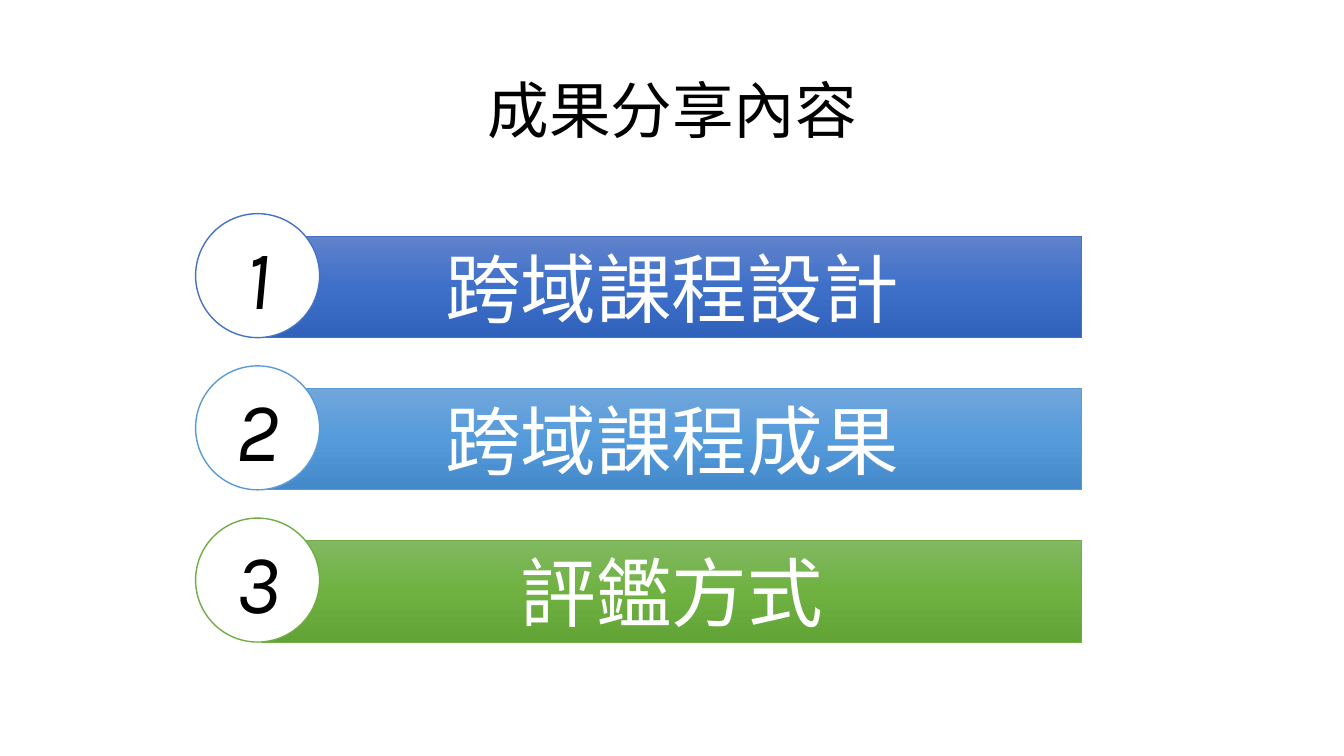
from copy import deepcopy

from lxml import etree
from pptx import Presentation
from pptx import util as u
from pptx.dml.color import RGBColor
from pptx.enum import shapes, text
from pptx.oxml.ns import qn

BLACK = RGBColor(0x00, 0x00, 0x00)
WHITE = RGBColor(0xFF, 0xFF, 0xFF)
BLUE = RGBColor(0x44, 0x72, 0xC4)
SKY = RGBColor(0x5B, 0x9B, 0xD5)
GREEN = RGBColor(0x70, 0xAD, 0x47)
BLUE_SHADES = [RGBColor(0x61, 0x83, 0xCB), RGBColor(0x3E, 0x70, 0xCA), RGBColor(0x30, 0x62, 0xBB)]
SKY_SHADES = [RGBColor(0x71, 0xA6, 0xDB), RGBColor(0x55, 0x9B, 0xDB), RGBColor(0x44, 0x8A, 0xCA)]
GREEN_SHADES = [RGBColor(0x81, 0xB8, 0x61), RGBColor(0x6F, 0xB2, 0x42), RGBColor(0x62, 0xA3, 0x36)]

CJK = "Noto Sans CJK SC"
TITLE_FORMAT = {"size": u.Pt(44), "name": CJK}
BAR_FORMAT = {"size": u.Pt(54), "name": CJK}
NUMBER_FORMAT = {"size": u.Pt(60), "name": "Karla", "italic": True}

# Row grid, in inches
BAR_LEFT, BAR_WIDTH, BAR_HEIGHT = 2.6, 8.13, 1.01
FIRST_TOP, ROW_PITCH = 2.34, 1.51
CIRCLE_LEFT, CIRCLE_SIZE = 1.94, 1.23


def write(shape, words, color, formats):
    frame = shape.text_frame
    frame.word_wrap = True
    frame.vertical_anchor = text.MSO_ANCHOR.MIDDLE
    paragraph = frame.paragraphs[0]
    paragraph.alignment = text.PP_ALIGN.CENTER
    run = paragraph.add_run()
    run.text = words
    run.font.color.rgb = color
    for key, value in formats.items():
        setattr(run.font, key, value)
    # East Asian characters take their own typeface entry
    etree.SubElement(run.font._element, qn("a:ea"), typeface=formats["name"])
    return paragraph


def add_outlined(kind, left, top, width, height, line_color, line_width):
    shape = slide.shapes.add_shape(kind, *(u.Inches(n) for n in (left, top, width, height)))
    shape.shadow.inherit = False
    shape.line.color.rgb = line_color
    shape.line.width = u.Pt(line_width)
    return shape


presentation = Presentation()
presentation.slide_width, presentation.slide_height = u.Inches(13.33), u.Inches(7.5)
slide = presentation.slides.add_slide(presentation.slide_layouts[6])

# Title
title = slide.shapes.add_textbox(u.Inches(0.92), u.Inches(0.4), u.Inches(11.5), u.Inches(1.45))
write(title, "成果分享內容", BLACK, TITLE_FORMAT).line_spacing = 0.9

# Numbered bars
rows = [
    ("跨域課程設計", BLUE, BLUE_SHADES),
    ("跨域課程成果", SKY, SKY_SHADES),
    ("評鑑方式", GREEN, GREEN_SHADES),
]
for index, (topic, accent, shades) in enumerate(rows):
    top = FIRST_TOP + index * ROW_PITCH
    bar = add_outlined(shapes.MSO_SHAPE.RECTANGLE, BAR_LEFT, top, BAR_WIDTH, BAR_HEIGHT, accent, 0.5)
    bar.fill.gradient()
    bar.fill.gradient_angle = 270
    # A third stop turns the default gradient into light, middle, dark
    stop_list = bar._element.spPr.find(qn("a:gradFill")).find(qn("a:gsLst"))
    stop_list.append(deepcopy(stop_list[-1]))
    for stop, position, shade in zip(bar.fill.gradient_stops, (0, 0.5, 1), shades):
        stop.position = position
        stop.color.rgb = shade
    write(bar, topic, WHITE, BAR_FORMAT)

    # The circle rests on the bar's lower edge
    circle_top = top + BAR_HEIGHT - CIRCLE_SIZE
    circle = add_outlined(shapes.MSO_SHAPE.OVAL, CIRCLE_LEFT, circle_top, CIRCLE_SIZE, CIRCLE_SIZE, accent, 1)
    circle.fill.solid()
    circle.fill.fore_color.rgb = WHITE
    write(circle, str(index + 1), BLACK, NUMBER_FORMAT)

presentation.save("out.pptx")
